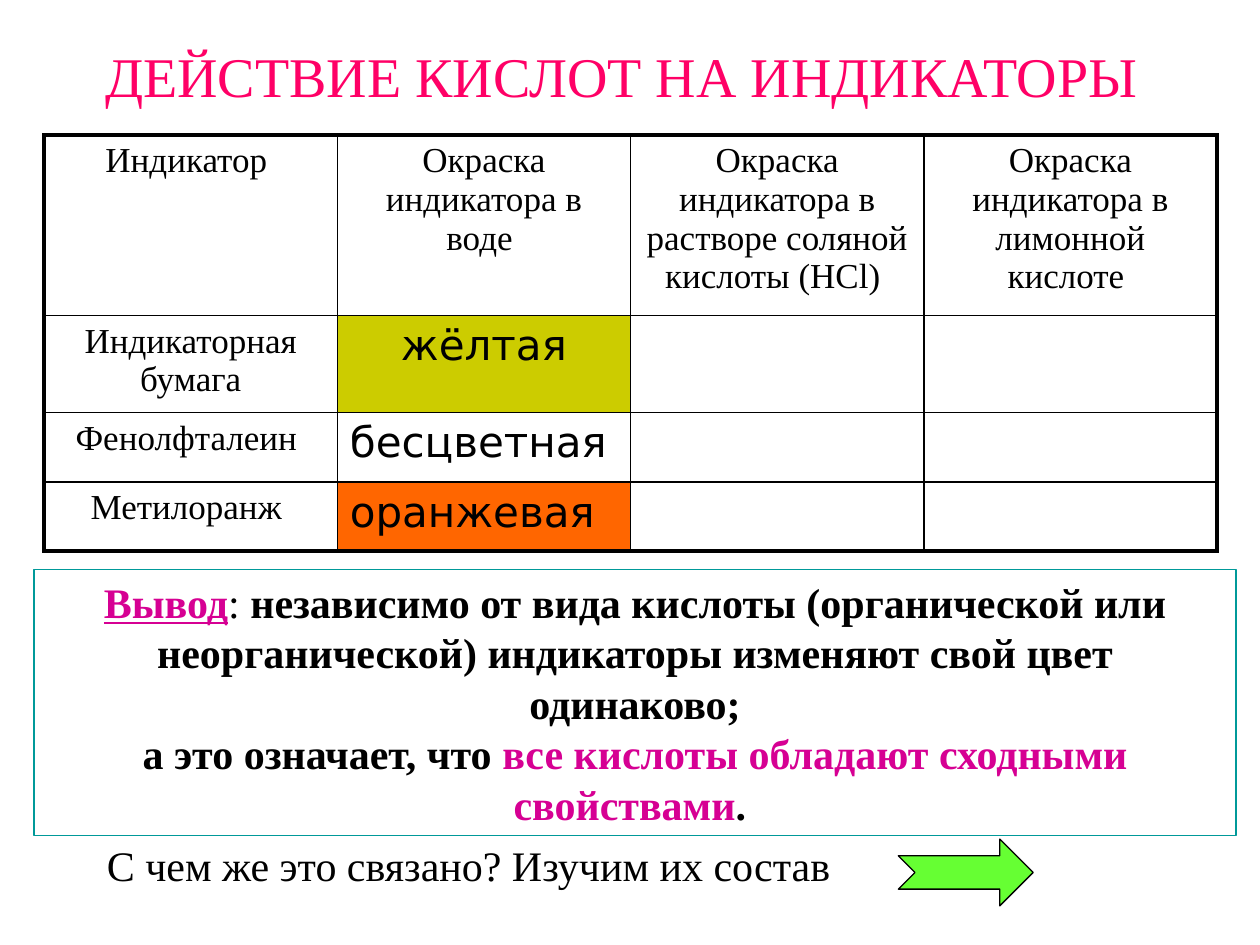
from dataclasses import dataclass

from lxml import etree
from pptx import Presentation
from pptx import util as u
from pptx.dml.color import RGBColor
from pptx.enum import shapes, text
from pptx.oxml import ns


@dataclass
class Theme:
    black: str = "000000"
    pink: str = "FF0066"
    magenta: str = "D60093"
    teal: str = "009999"
    yellow: str = "CCCC00"
    orange: str = "FF6600"
    green: str = "66FF33"
    serif: str = "Times New Roman"
    sans: str = "DejaVu Sans"
    title: int = 32
    body: int = 24
    label: int = 20
    outer: float = 2.25
    inner: float = 1
    outline: float = 0.75


theme = Theme()
deck = Presentation()
deck.slide_width, deck.slide_height = u.Inches(10), u.Inches(7.5)
slide = deck.slides.add_slide(deck.slide_layouts[6])


def area(column, row, columns, rows):
    """Turn places on a grid of 100 columns and 75 rows into lengths."""
    across, down = deck.slide_width / 100, deck.slide_height / 75
    return [round(n) for n in (column * across, row * down, columns * across, rows * down)]


def write(para, words, size=theme.body, font=theme.serif, color=theme.black,
          bold=False, underline=False, align=text.PP_ALIGN.CENTER):
    para.alignment = align
    span = para.add_run()
    span.text = words
    span.font.size = u.Pt(size)
    span.font.name = font
    span.font.bold = bold
    span.font.underline = underline
    span.font.color.rgb = RGBColor.from_string(color)


# Title
title = slide.shapes.add_textbox(*area(4.8, 1.1, 90.2, 8)).text_frame
title.word_wrap = True
title.vertical_anchor = text.MSO_ANCHOR.BOTTOM
write(title.paragraphs[0], "ДЕЙСТВИЕ КИСЛОТ НА ИНДИКАТОРЫ ", size=theme.title, color=theme.pink)

# Indicator table: label, colour in water, cell fill, alignment
headers = ["Индикатор ", "Окраска индикатора в воде ",
           "Окраска индикатора в растворе соляной кислоты (HCl) ",
           "Окраска индикатора в лимонной кислоте "]
indicators = [
    ("Индикаторная бумага", "жёлтая", theme.yellow, text.PP_ALIGN.CENTER),
    ("Фенолфталеин ", "бесцветная", None, text.PP_ALIGN.LEFT),
    ("Метилоранж ", "оранжевая", theme.orange, text.PP_ALIGN.LEFT),
]
row_heights = [13.3, 7.7, 5.5, 5.5]
frame = slide.shapes.add_table(len(row_heights), len(headers),
                               *area(3.5, 10.7, 93.1, sum(row_heights)))
table = frame.table
table.first_row = table.horz_banding = False
for row, height in zip(table.rows, row_heights):
    row.height = area(0, 0, 0, height)[3]

for column, header in enumerate(headers):
    write(table.cell(0, column).text_frame.paragraphs[0], header, size=theme.label)
for row, (name, water, _, align) in enumerate(indicators, 1):
    write(table.cell(row, 0).text_frame.paragraphs[0], name, size=theme.label)
    write(table.cell(row, 1).text_frame.paragraphs[0], water, font=theme.sans, align=align)

# Cell borders, heavier on the outside, then fills
last_row, last_column = len(row_heights) - 1, len(headers) - 1
for row in range(last_row + 1):
    for column in range(last_column + 1):
        cell = table.cell(row, column)
        properties = cell._tc.get_or_add_tcPr()
        edges = {"a:lnL": column == 0, "a:lnR": column == last_column,
                 "a:lnT": row == 0, "a:lnB": row == last_row}
        for tag, outside in edges.items():
            width = theme.outer if outside else theme.inner
            border = etree.SubElement(properties, ns.qn(tag), w=str(u.Pt(width)))
            paint = etree.SubElement(border, ns.qn("a:solidFill"))
            etree.SubElement(paint, ns.qn("a:srgbClr"), val=theme.black)
        color = indicators[row - 1][2] if row and column == 1 else None
        if color:
            cell.fill.solid()
            cell.fill.fore_color.rgb = RGBColor.from_string(color)
        else:
            cell.fill.background()

# Conclusion box
box = slide.shapes.add_shape(shapes.MSO_SHAPE.RECTANGLE, *area(2.7, 45.2, 95.4, 21.1))
box.shadow.inherit = False
box.fill.background()
box.line.color.rgb = RGBColor.from_string(theme.teal)
box.line.width = u.Pt(theme.outline)
conclusion = box.text_frame
conclusion.word_wrap = True
conclusion.vertical_anchor = text.MSO_ANCHOR.MIDDLE
conclusion.margin_left = conclusion.margin_right = area(0, 0, 2, 0)[2]
para = conclusion.paragraphs[0]
write(para, "Вывод", color=theme.magenta, bold=True, underline=True)
write(para, ": ")
write(para, "независимо от вида кислоты (органической или неорганической) "
            "индикаторы изменяют свой цвет одинаково;", bold=True)
para = conclusion.add_paragraph()
write(para, "а это означает, что ", bold=True)
write(para, "все кислоты обладают сходными свойствами", color=theme.magenta, bold=True)
write(para, ". ", bold=True)

# Closing question
question = slide.shapes.add_textbox(*area(7.5, 66.1, 77.2, 5)).text_frame
question.word_wrap = True
question.vertical_anchor = text.MSO_ANCHOR.MIDDLE
write(question.paragraphs[0], "С чем же это связано? Изучим их состав", align=text.PP_ALIGN.LEFT)

# Arrow to the next topic
arrow = slide.shapes.add_shape(shapes.MSO_SHAPE.NOTCHED_RIGHT_ARROW, *area(71.3, 66.6, 10.7, 5.3))
arrow.shadow.inherit = False
arrow.fill.solid()
arrow.fill.fore_color.rgb = RGBColor.from_string(theme.green)
arrow.line.color.rgb = RGBColor.from_string(theme.black)
arrow.line.width = u.Pt(theme.outline)

deck.save("out.pptx")
